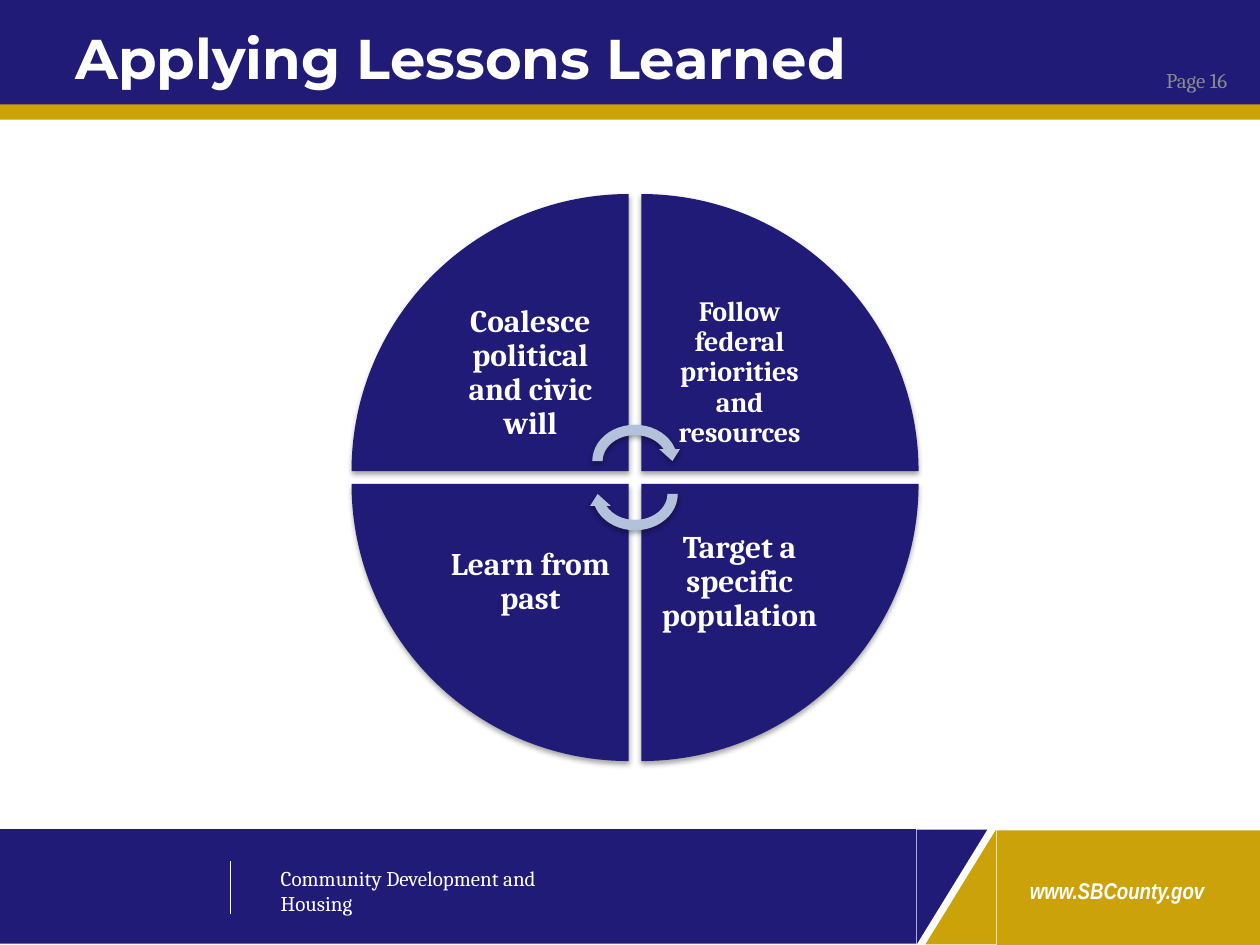
from lxml import etree
from pptx import Presentation
from pptx.dml.color import RGBColor
from pptx.enum import shapes, text
from pptx.oxml import ns
from pptx.util import Inches, Pt

COLORS = {"navy": "1F1B77", "gold": "CCA20A", "white": "FFFFFF",
          "gray": "8C8C8C", "steel": "B3C1DB", "black": "000000"}
KIND = shapes.MSO_SHAPE
SIDE = text.PP_ALIGN


def tint(name):
    return RGBColor.from_string(COLORS[name])


def write(frame, words, size=18, font="Cambria", color="white", bold=False,
          slant=False, align=SIDE.LEFT, lines=None):
    line = frame.paragraphs[0]
    line.text = words
    line.alignment = align
    if lines:
        line.line_spacing = lines
    face = line.font
    face.name, face.size = font, Pt(size)
    face.bold, face.italic = bold, slant
    face.color.rgb = tint(color)


def shade(shape):
    group = etree.SubElement(shape._element.spPr, ns.qn("a:effectLst"))
    cast = etree.SubElement(group, ns.qn("a:outerShdw"), blurRad=str(Pt(3.1)),
                            dist=str(Pt(1.8)), dir="5400000", rotWithShape="0")
    hue = etree.SubElement(cast, ns.qn("a:srgbClr"), val=COLORS["black"])
    etree.SubElement(hue, ns.qn("a:alpha"), val="35000")


class Painter:
    def __init__(self, slide):
        self.slide = slide

    def shape(self, kind, left, top, width, height, color, turn=0, cast=False):
        item = self.slide.shapes.add_shape(
            kind, Inches(left), Inches(top), Inches(width), Inches(height))
        item.rotation = turn
        item.fill.solid()
        item.fill.fore_color.rgb = tint(color)
        item.line.fill.background()
        if cast:
            shade(item)
        else:
            item.shadow.inherit = False

    def label(self, left, top, width, height, words, middle=True, inset=None, **style):
        box = self.slide.shapes.add_textbox(
            Inches(left), Inches(top), Inches(width), Inches(height))
        frame = box.text_frame
        frame.word_wrap = True
        anchor = text.MSO_ANCHOR
        frame.vertical_anchor = anchor.MIDDLE if middle else anchor.TOP
        if inset:
            frame.margin_left = frame.margin_right = Inches(inset)
            frame.margin_top = frame.margin_bottom = Inches(inset)
        write(frame, words, **style)

    def rule(self, left, top, right, bottom, color, width):
        line = self.slide.shapes.add_connector(
            shapes.MSO_CONNECTOR.STRAIGHT,
            Inches(left), Inches(top), Inches(right), Inches(bottom))
        line.line.color.rgb = tint(color)
        line.line.width = Pt(width)
        etree.SubElement(line._element.spPr, ns.qn("a:effectLst"))


def main():
    deck = Presentation()
    deck.slide_width, deck.slide_height = Inches(10), Inches(7.5)
    pen = Painter(deck.slides.add_slide(deck.slide_layouts[6]))

    pen.shape(KIND.RECTANGLE, 0, 0.79, 10.01, 0.16, "gold")
    pen.shape(KIND.RECTANGLE, 0, 0, 10.01, 0.83, "navy")
    pen.shape(KIND.RECTANGLE, 7.91, 6.59, 2.09, 0.91, "gold")
    pen.shape(KIND.RIGHT_TRIANGLE, 7.17, 6.76, 0.91, 0.56, "gold", turn=270)
    pen.shape(KIND.RECTANGLE, -0.01, 6.58, 7.28, 0.91, "navy")
    pen.shape(KIND.RIGHT_TRIANGLE, 7.1, 6.76, 0.91, 0.56, "navy", turn=90)
    pen.rule(1.83, 6.83, 1.83, 7.25, "white", 0.25)

    pen.label(7.74, 6.91, 2.25, 0.32, "www.SBCounty.gov", middle=False, size=13,
              font="Arial Narrow", bold=True, slant=True, align=SIDE.CENTER)
    pen.label(8.67, 0.44, 1.17, 0.4, "Page 16", size=12, color="gray", align=SIDE.RIGHT)
    pen.label(2.13, 6.82, 2.77, 0.3, "Community Development and Housing",
              middle=False, size=12)
    pen.label(0.5, -0.17, 9, 1.25, "Applying Lessons Learned", size=32,
              font="Montserrat", bold=True)

    wedge, gap, box = 2.2, 0.1, 1.56
    left, top = 2.79, 1.54
    parts = [("Coalesce political and civic will", 0, 0, 18, 0.14),
             ("Follow federal priorities and resources", 1, 0, 16, 0.12),
             ("Target a specific population", 1, 1, 18, 0.14),
             ("Learn from past", 0, 1, 18, 0.14)]
    for index, (words, col, row, size, inset) in enumerate(parts):
        x, y = left + col * (wedge + gap), top + row * (wedge + gap)
        pen.shape(KIND.PIE_WEDGE, x, y, wedge, wedge, "navy", turn=90 * index, cast=True)
        pen.label(x + (1 - col) * (wedge - box), y + (1 - row) * (wedge - box), box, box,
                  words, inset=inset, size=size, bold=True, align=SIDE.CENTER, lines=0.9)

    for y, turn in ((3.33, 0), (3.59, 180)):
        pen.shape(KIND.CIRCULAR_ARROW, 4.66, y, 0.76, 0.66, "steel", turn=turn, cast=True)

    deck.save("out.pptx")


if __name__ == "__main__":
    main()
